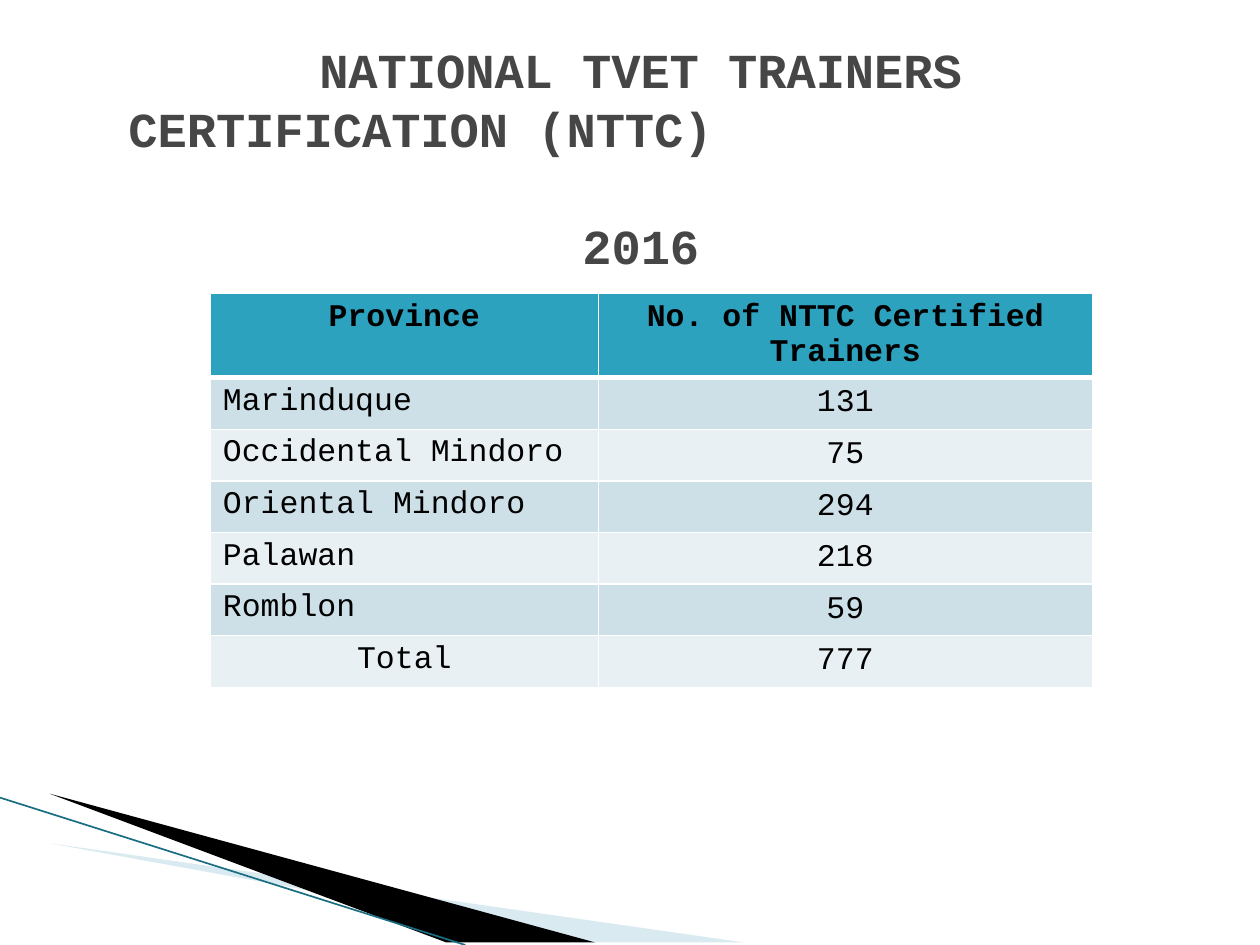
from lxml import etree
from pptx import Presentation
from pptx.dml.color import RGBColor
from pptx.enum.shapes import MSO_CONNECTOR
from pptx.enum.text import MSO_ANCHOR, PP_ALIGN
from pptx.oxml.ns import qn
from pptx.util import Cm, Pt

STRAIGHT = MSO_CONNECTOR.STRAIGHT
TOP, MIDDLE = MSO_ANCHOR.TOP, MSO_ANCHOR.MIDDLE
LEFT, CENTER = PP_ALIGN.LEFT, PP_ALIGN.CENTER

ROWS = [
    ("Province", "No. of NTTC Certified Trainers"),
    ("Marinduque", "131"),
    ("Occidental Mindoro", "75"),
    ("Oriental Mindoro", "294"),
    ("Palawan", "218"),
    ("Romblon", "59"),
    ("Total", "777"),
]


def rgb(value):
    return RGBColor.from_string(value)


def write(p, text, size=18, color="000000", bold=False, align=LEFT, font="Courier New"):
    p.alignment = align
    r = p.add_run()
    r.text = text
    r.font.name, r.font.size, r.font.bold = font, Pt(size), bold
    r.font.color.rgb = rgb(color)


class Deck:
    """Slide style and the current slide, with a method for each kind of element."""

    header, bands, border = "2DA2BF", ("E8F0F4", "CDE0E8"), "FFFFFF"
    title_color, title_size, title_pitch = "464646", 27.9, 33.4

    def __init__(self):
        self.prs = Presentation()
        self.prs.slide_width, self.prs.slide_height = Cm(25.4), Cm(19.05)
        self.s = self.prs.slides.add_slide(self.prs.slide_layouts[6])

    def wedge(self, points, color, opacity=100):
        (x, y), *rest = points
        builder = self.s.shapes.build_freeform(x, y, scale=Cm(1))
        builder.add_line_segments(rest, close=True)
        sp = builder.convert_to_shape()
        sp.shadow.inherit = False
        sp.fill.solid()
        sp.fill.fore_color.rgb = rgb(color)
        sp.line.fill.background()
        if opacity < 100:
            clr = sp.fill._xPr.find(".//" + qn("a:srgbClr"))
            etree.SubElement(clr, qn("a:alpha"), val=str(opacity * 1000))

    def line(self, x1, y1, x2, y2, color, width):
        sp = self.s.shapes.add_connector(STRAIGHT, Cm(x1), Cm(y1), Cm(x2), Cm(y2))
        sp.line.color.rgb, sp.line.width = rgb(color), Pt(width)
        etree.SubElement(sp._element.spPr, qn("a:effectLst"))

    def title(self, x, y, w, h, lines):
        tf = self.s.shapes.add_textbox(Cm(x), Cm(y), Cm(w), Cm(h)).text_frame
        tf.word_wrap, tf.vertical_anchor = True, MIDDLE
        for i, (text, align, gap) in enumerate(lines):
            p = tf.add_paragraph() if i else tf.paragraphs[0]
            p.line_spacing = Pt(self.title_pitch)
            p.space_before = Pt(gap * self.title_pitch)
            write(p, text, self.title_size, self.title_color, True, align)

    def borders(self, cell, bottom):
        tcPr = cell._tc.get_or_add_tcPr()
        widths = {"lnL": 1, "lnR": 1, "lnT": 1, "lnB": bottom}
        for i, (tag, width) in enumerate(widths.items()):
            ln = etree.Element(qn("a:" + tag), w=str(Pt(width)))
            fill = etree.SubElement(ln, qn("a:solidFill"))
            etree.SubElement(fill, qn("a:srgbClr"), val=self.border)
            tcPr.insert(i, ln)

    def table(self, x, y, widths, row_height, rows):
        frame = self.s.shapes.add_table(len(rows), len(widths), Cm(x), Cm(y),
                                        Cm(sum(widths)), Cm(row_height * len(rows)))
        table = frame.table
        for column, width in zip(table.columns, widths):
            column.width = Cm(width)
        for i, row in enumerate(rows):
            table.rows[i].height = Cm(row_height)
            head = i == 0
            for j, text in enumerate(row):
                cell = table.cell(i, j)
                cell.fill.solid()
                cell.fill.fore_color.rgb = rgb(self.header if head else self.bands[i % 2])
                cell.vertical_anchor = MIDDLE if j and not head else TOP
                centered = j or head or text == "Total"
                write(cell.text_frame.paragraphs[0], text, bold=head,
                      align=CENTER if centered else LEFT)
                self.borders(cell, 3 if head else 1)


def main():
    deck = Deck()
    deck.wedge([(1.4, 16.52), (15.11, 19.05), (11.58, 19.05)], "A0CBDC", 40)
    deck.wedge([(1.35, 16.48), (11.6, 19.05), (9.41, 19.05)], "000000")
    deck.line(0, 16.08, 9.38, 19.05, "1A6E82", 0.95)
    deck.table(4.24, 5.92, (7.82, 9.96), 1.04, ROWS)
    deck.title(2.34, 2, 21.16, 2.34, [
        ("NATIONAL TVET TRAINERS", CENTER, 0),
        ("CERTIFICATION (NTTC)", LEFT, 0),
        ("2016", CENTER, 1),
    ])
    deck.prs.save("out.pptx")


if __name__ == "__main__":
    main()
